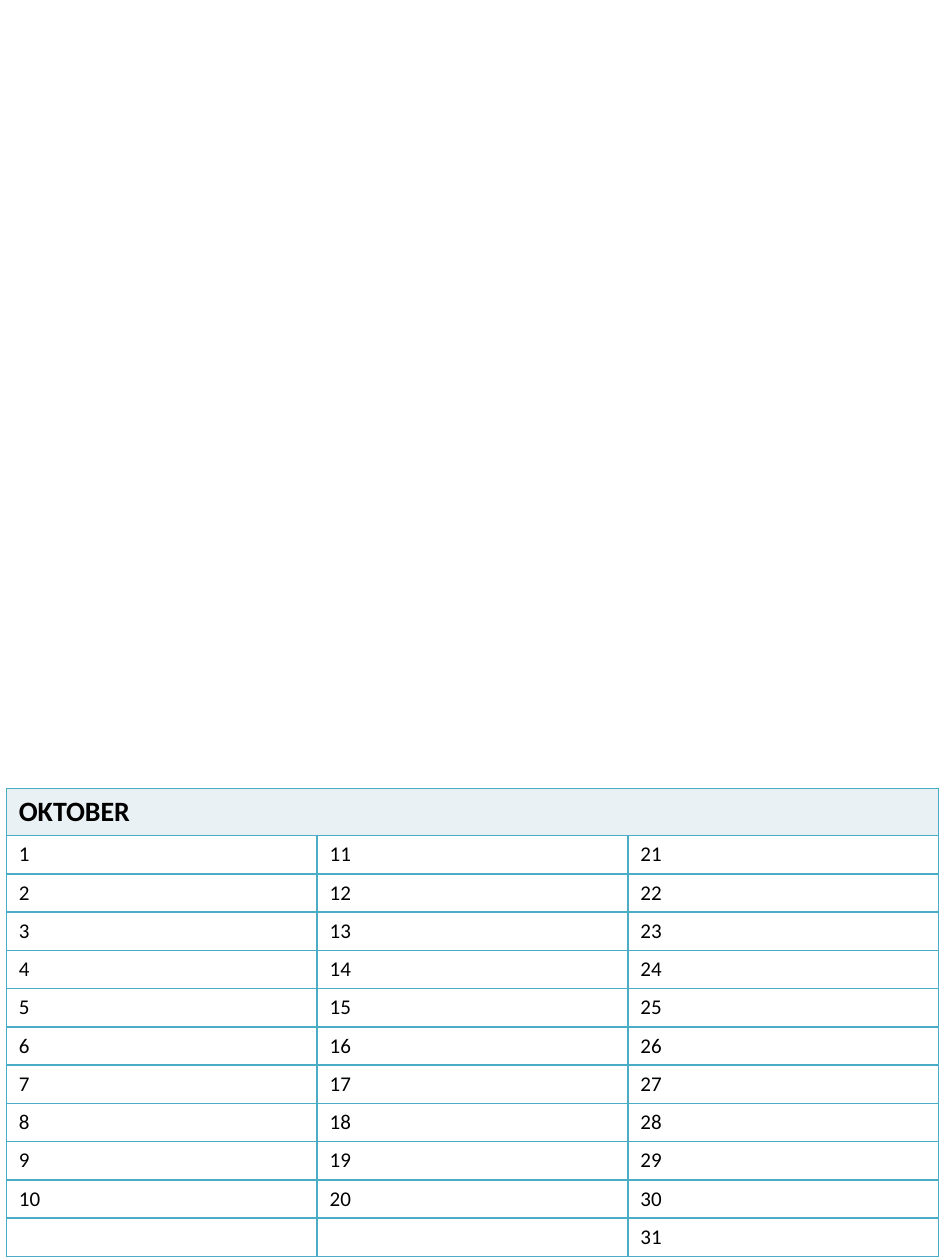
import pptx
import pptx.util
import pptx.dml.color
import pptx.enum.text
import pptx.oxml.ns
from lxml import etree

Inches, Pt = pptx.util.Inches, pptx.util.Pt
RGBColor = pptx.dml.color.RGBColor
qn = pptx.oxml.ns.qn

TEAL = RGBColor(0x4B, 0xAC, 0xC6)
PALE = RGBColor(0xE9, 0xF1, 0xF5)
WHITE = RGBColor(0xFF, 0xFF, 0xFF)
BLACK = RGBColor(0, 0, 0)

HEAD = {"name": "Calibri", "size": Pt(16), "bold": True}
DAY = {"name": "Calibri", "size": Pt(12), "bold": False}

COLS, ROWS = 3, 11
LAST = 31


def border(cell):
    """Draw a thin line on all four sides of the cell."""
    props = cell._tc.get_or_add_tcPr()
    for i, side in enumerate(("lnL", "lnR", "lnT", "lnB")):
        line = etree.Element(qn("a:" + side), w=str(Pt(1)))
        fill = etree.SubElement(line, qn("a:solidFill"))
        etree.SubElement(fill, qn("a:srgbClr"), val=str(TEAL))
        props.insert(i, line)


def style(cell, text, form, fill):
    cell.fill.solid()
    cell.fill.fore_color.rgb = fill
    border(cell)
    cell.vertical_anchor = pptx.enum.text.MSO_ANCHOR.MIDDLE
    para = cell.text_frame.paragraphs[0]
    if not text:
        # Keep empty cells at the height of a day row
        size = str(int(form["size"].pt * 100))
        etree.SubElement(para._p, qn("a:endParaRPr"), sz=size)
        return
    run = para.add_run()
    run.text = text
    for key, value in form.items():
        setattr(run.font, key, value)
    run.font.color.rgb = BLACK


def month(slide, name, left, top, width, height):
    """Month table: one merged heading, days running down each column."""
    table = slide.shapes.add_table(
        ROWS + 1, COLS, left, top, width, height).table
    table.horz_banding = False
    for col in table.columns:
        col.width = int(width / COLS)

    # Heading
    table.rows[0].height = Inches(0.37)
    for c in range(COLS):
        style(table.cell(0, c), "" if c else name, HEAD, PALE)
    table.cell(0, 0).merge(table.cell(0, COLS - 1))

    # Days, ten to a column, with the last one below
    for r in range(1, ROWS + 1):
        table.rows[r].height = int((height - Inches(0.37)) / ROWS)
        for c in range(COLS):
            day = r + 10 * c
            shown = r <= 10 or day == LAST
            style(table.cell(r, c), str(day) if shown else "", DAY, WHITE)


def main():
    deck = pptx.Presentation()
    deck.slide_width, deck.slide_height = Inches(7.5), Inches(10)
    slide = deck.slides.add_slide(deck.slide_layouts[6])
    month(slide, "OKTOBER",
          Inches(0.05), Inches(6.26), Inches(7.4), Inches(3.71))
    deck.save("out.pptx")


if __name__ == "__main__":
    main()
